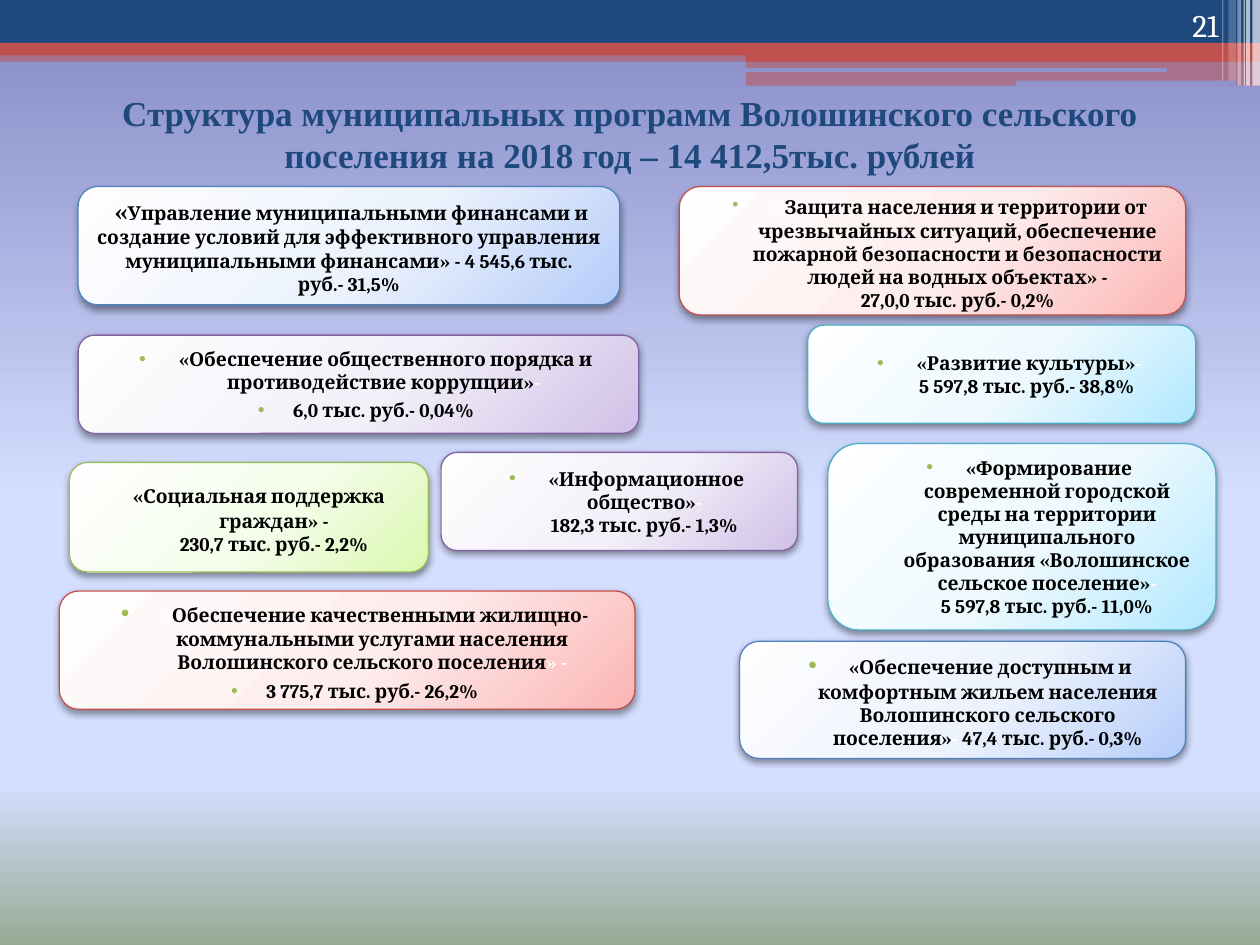
from copy import deepcopy

from lxml.etree import SubElement
from pptx import Presentation
from pptx.dml.color import RGBColor
from pptx.enum.shapes import MSO_SHAPE
from pptx.enum.text import MSO_ANCHOR, MSO_AUTO_SIZE, PP_ALIGN
from pptx.oxml import parse_xml
from pptx.oxml.ns import nsdecls, qn
from pptx.util import Inches, Pt

COLORS = {"navy": "1F497D", "red": "C0504D", "white": "FFFFFF",
          "black": "000000", "bullet": "9BBB59", "lilac": "8F93CC"}
BACKDROP = [(0, "8488C4"), (53, "D4DEFF"), (83, "D4DEFF"), (100, "96AB94")]
DOWNWARD = '<a:lin ang="5400000" scaled="0"/>'
FROM_CORNER = ('<a:path path="circle"><a:fillToRect l="-40000" t="-90000" '
               'r="140000" b="190000"/></a:path>')
# Outline colour, then the three gradient colours of each card theme
THEMES = {
    "blue": ("4F81BD", "FEFEFF", "EDF3FD", "B5CCF9"),
    "red": ("C0504D", "FFFEFE", "FDEDED", "FBB5B4"),
    "green": ("9BBB59", "FEFFFE", "F5FDEB", "DAF8B0"),
    "purple": ("8064A2", "FEFEFE", "F3F0F9", "D0C1E7"),
    "aqua": ("4BACC6", "FEFFFF", "EDF9FE", "B2E8FF"),
}
TITLE = ("Структура муниципальных программ Волошинского сельского "
         "поселения на 2018 год – 14 412,5тыс. рублей")

# Runs are (text, size, colour)
SMALL_LEAD = (" ", 11, "white")
LARGE_LEAD = (" ", 14, "white")
SOCIAL_SUPPORT = [[
    (" ", 14, "black"),
    ("«Социальная поддержка граждан» -\n230,7 тыс. руб.- 2,2%", 11, "black")]]
PROGRAMMES = [
    ("blue", (0.62, 1.48, 4.3, 0.94), False, [[
        (" «", 14, "black"),
        ("Управление муниципальными финансами и создание условий для "
         "эффективного управления муниципальными финансами» - 4 545,6 тыс.\n"
         "руб.- 31,5%", 11, "black")]]),
    ("red", (5.39, 1.48, 4.02, 1.02), True, [[
        (" ", 10, "white"), ("«", 14, "white"),
        ("Защита населения и территории от чрезвычайных ситуаций, обеспечение "
         "пожарной безопасности и безопасности людей на водных объектах» -\n"
         "27,0,0 тыс. руб.- 0,2%", 11, "black")]]),
    ("red", (0.47, 4.69, 4.57, 0.94), True, [
        [LARGE_LEAD, ("«", 11, "white"),
         ("Обеспечение качественными жилищно-коммунальными услугами населения "
          "Волошинского сельского поселения", 11, "black"),
         ("» -", 11, "white")],
        [("3 775,7 тыс. руб.- 26,2%", 11, "black")]]),
    ("purple", (3.5, 3.59, 2.83, 0.78), True, [[
        SMALL_LEAD, ("«Информационное общество»", 11, "black"),
        ("-", 11, "white"), ("\n182,3 тыс. руб.- 1,3%", 11, "black")]]),
    ("aqua", (6.41, 2.58, 3.08, 0.78), True, [[
        SMALL_LEAD, ("«Развитие культуры»", 11, "black"),
        ("-", 11, "white"), ("\n5 597,8 тыс. руб.- 38,8%", 11, "black")]]),
    ("blue", (5.87, 5.09, 3.54, 0.93), True, [[
        LARGE_LEAD,
        ("«Обеспечение доступным и комфортным жильем населения "
         "Волошинского сельского поселения»", 11, "black"),
        ("- ", 11, "white"), ("47,4 тыс. руб.- 0,3%", 11, "black")]]),
    ("purple", (0.62, 2.66, 4.45, 0.78), True, [
        [SMALL_LEAD,
         ("«Обеспечение общественного порядка и противодействие коррупции»",
          11, "black"), ("-", 11, "white")],
        [("6,0 тыс. руб.- 0,04%", 11, "black")]]),
    ("aqua", (6.57, 3.52, 3.08, 1.48), True, [[
        SMALL_LEAD,
        ("«Формирование современной городской среды на территории "
         "муниципального образования «Волошинское сельское поселение»",
         11, "black"),
        ("-", 11, "white"), ("\n5 597,8 тыс. руб.- 11,0%", 11, "black")]]),
]


def place(shape, box):
    shape.left, shape.top, shape.width, shape.height = map(Inches, box)


def set_gradient(fill, holder, stops, direction):
    """Fill holder, the XML parent of the fill, with a gradient."""
    fill.solid()
    fill.fore_color.rgb = RGBColor.from_string(stops[0][1])
    marks = "".join(f'<a:gs pos="{pos * 1000}"><a:srgbClr val="{color}"/></a:gs>'
                    for pos, color in stops)
    solid = holder.find(qn("a:solidFill"))
    holder.replace(solid, parse_xml(
        f'<a:gradFill {nsdecls("a")} rotWithShape="1">'
        f'<a:gsLst>{marks}</a:gsLst>{direction}</a:gradFill>'))


def add_run(paragraph, text, size, color, font="Cambria", bold=True):
    """Add text, turning each newline into a line break of the same size."""
    for index, piece in enumerate(text.split("\n")):
        if index:
            paragraph.add_line_break()
            line_break = paragraph._p[-1]
        run = paragraph.add_run()
        run.text = piece
        run.font.name, run.font.size, run.font.bold = font, Pt(size), bold
        run.font.color.rgb = RGBColor.from_string(COLORS[color])
        if index:
            line_break.append(deepcopy(run._r.rPr))


def add_bar(slide, box, color, opacity=100, kind=MSO_SHAPE.RECTANGLE):
    bar = slide.shapes.add_shape(kind, *map(Inches, box))
    bar.shadow.inherit = False
    bar.line.fill.background()
    bar.fill.solid()
    bar.fill.fore_color.rgb = RGBColor.from_string(COLORS[color])
    if opacity < 100:
        tint = bar._element.spPr.find(qn("a:solidFill"))[0]
        SubElement(tint, qn("a:alpha"), val=str(opacity * 1000))


def add_header(slide):
    add_bar(slide, (0, 0.4, 10, 0.09), "red", 50)
    add_bar(slide, (0, 0, 10, 0.34), "navy")
    add_bar(slide, (0, 0.34, 10, 0.1), "red")
    add_bar(slide, (5.92, 0.39, 4.08, 0.1), "red")
    add_bar(slide, (5.92, 0.48, 4.08, 0.2), "red", 50)
    for strip in [(5.91, 0.54, 3.35, 0.03), (8.06, 0.64, 1.75, 0.04)]:
        add_bar(slide, strip, "lilac", kind=MSO_SHAPE.ROUNDED_RECTANGLE)
    for left, width, height, opacity in [
            (9.94, 0.06, 0.68, 65), (9.89, 0.03, 0.68, 65),
            (9.87, 0.01, 0.68, 60), (9.82, 0.03, 0.68, 40),
            (9.75, 0.06, 0.64, 20), (9.7, 0.01, 0.64, 30)]:
        add_bar(slide, (left, 0, width, height), "white", opacity)


def add_title(slide, box):
    title = slide.shapes.title
    place(title, box)
    slide.shapes._spTree.append(title._element)
    frame = title.text_frame
    frame.margin_top = frame.margin_bottom = 0
    frame.vertical_anchor = MSO_ANCHOR.MIDDLE
    frame.auto_size = MSO_AUTO_SIZE.NONE
    frame.paragraphs[0].alignment = PP_ALIGN.CENTER
    add_run(frame.paragraphs[0], TITLE, 20, "navy", "Times New Roman")


def add_page_number(slide, box):
    frame = slide.shapes.add_textbox(*map(Inches, box)).text_frame
    frame.word_wrap = True
    frame.vertical_anchor = MSO_ANCHOR.BOTTOM
    frame.paragraphs[0].alignment = PP_ALIGN.RIGHT
    add_run(frame.paragraphs[0], "21", 18, "white", bold=False)


def style_card(card, theme):
    outline, *shades = THEMES[theme]
    properties = card._element.spPr
    set_gradient(card.fill, properties, list(zip((0, 55, 100), shades)),
                 FROM_CORNER)
    card.line.color.rgb = RGBColor.from_string(outline)
    card.line.width = Pt(0.75)
    card.shadow.inherit = False
    properties.find(qn("a:effectLst")).append(parse_xml(
        f'<a:outerShdw {nsdecls("a")} blurRad="{Pt(4.1)}" dist="{Pt(2)}" '
        'dir="5400000" rotWithShape="0"><a:srgbClr val="000000">'
        '<a:alpha val="40000"/></a:srgbClr></a:outerShdw>'))


def fill_card(card, paragraphs, indented, bulleted):
    frame = card.text_frame
    frame.word_wrap = True
    frame.auto_size = MSO_AUTO_SIZE.NONE
    frame.vertical_anchor = MSO_ANCHOR.MIDDLE
    for index, runs in enumerate(paragraphs):
        paragraph = frame.add_paragraph() if index else frame.paragraphs[0]
        paragraph.alignment = PP_ALIGN.CENTER
        paragraph.space_before = Pt(3 if indented else 0)
        layout = paragraph._p.get_or_add_pPr()
        layout.set("marL", str(Inches(0.4 if indented else 0)))
        layout.set("indent", str(Inches(-0.28 if indented else 0)))
        if bulleted:
            tint = SubElement(layout, qn("a:buClr"))
            SubElement(tint, qn("a:srgbClr"), val=COLORS["bullet"])
            SubElement(layout, qn("a:buFont"), typeface="Arial")
            SubElement(layout, qn("a:buChar"), char="•")
        else:
            SubElement(layout, qn("a:buNone"))
        for run in runs:
            add_run(paragraph, *run)


def add_social_support(slide, box):
    card = slide.placeholders[1]
    place(card, box)
    slide.shapes._spTree.append(card._element)
    card._element.spPr.insert(1, parse_xml(
        f'<a:prstGeom {nsdecls("a")} prst="roundRect"><a:avLst/></a:prstGeom>'))
    style_card(card, "green")
    fill_card(card, SOCIAL_SUPPORT, indented=True, bulleted=False)


def add_programme(slide, theme, box, bulleted, paragraphs):
    card = slide.shapes.add_shape(MSO_SHAPE.ROUNDED_RECTANGLE, *map(Inches, box))
    style_card(card, theme)
    fill_card(card, paragraphs, indented=bulleted, bulleted=bulleted)


def main():
    deck = Presentation()
    deck.slide_width, deck.slide_height = Inches(10), Inches(7.5)
    slide = deck.slides.add_slide(deck.slide_layouts[1])
    backdrop = slide.background.fill
    backdrop.solid()
    set_gradient(backdrop, slide._element.xpath(".//p:bgPr")[0], BACKDROP, DOWNWARD)
    add_header(slide)
    add_title(slide, (0.5, 0.7, 9, 0.72))
    add_page_number(slide, (8.94, 0, 0.83, 0.4))
    add_social_support(slide, (0.55, 3.67, 2.85, 0.87))
    for programme in PROGRAMMES:
        add_programme(slide, *programme)
    deck.save("out.pptx")


if __name__ == "__main__":
    main()
